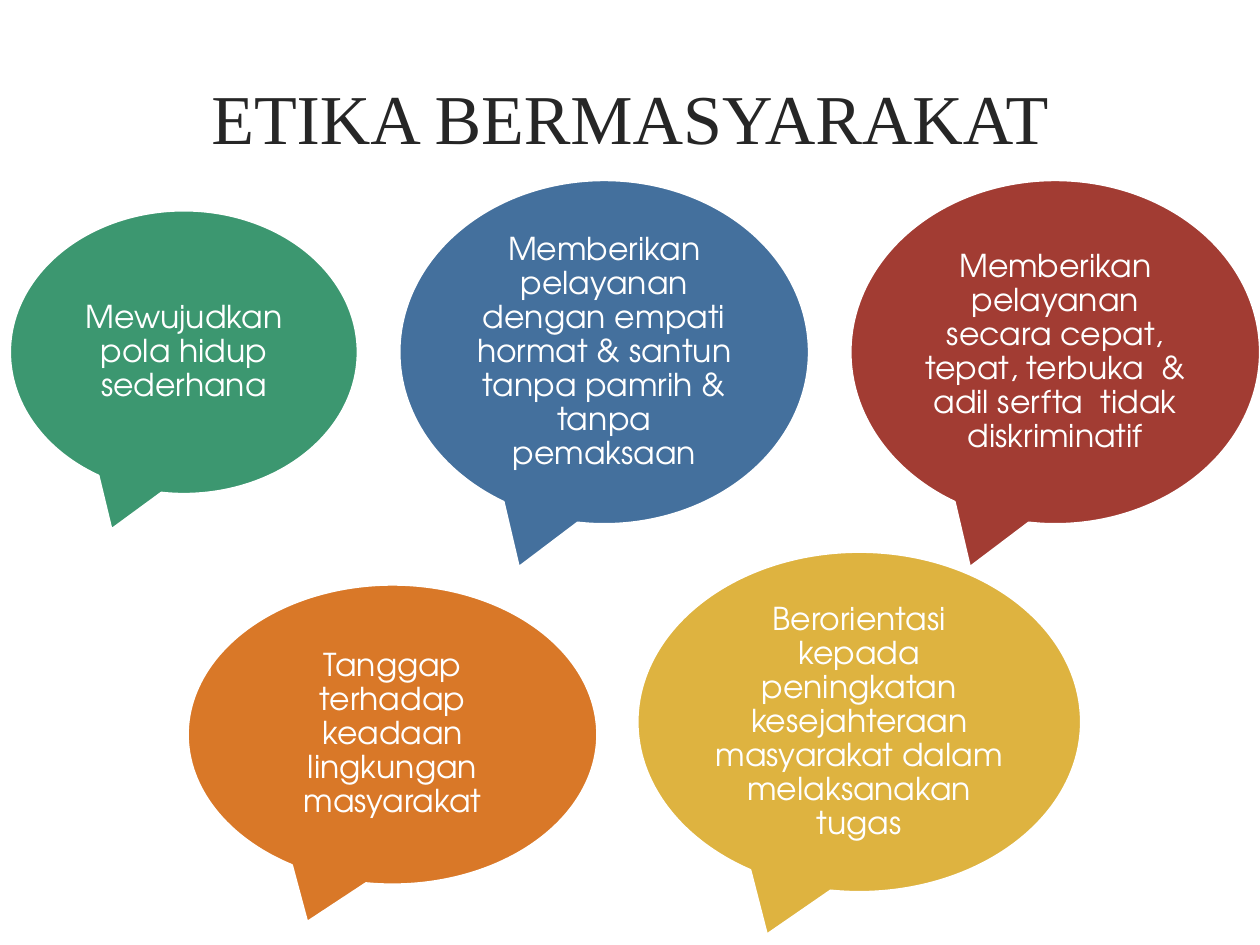
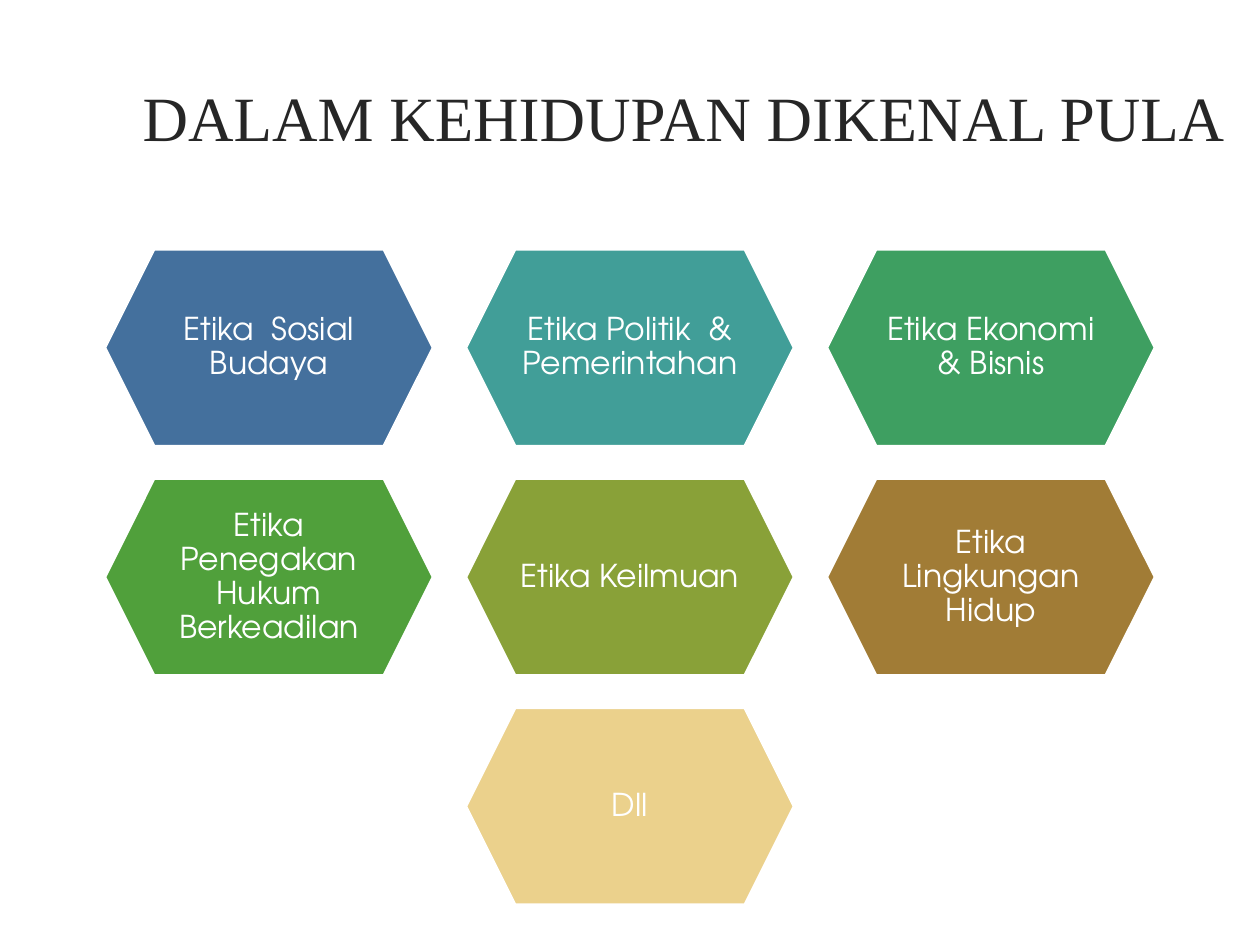
from pptx import Presentation
from pptx.dml.color import RGBColor
from pptx.enum.shapes import MSO_SHAPE as Shape
from pptx.enum.text import MSO_ANCHOR as Anchor, MSO_AUTO_SIZE as AutoSize, PP_ALIGN as Align
from pptx.util import Inches, Pt

COLORS = {
    "title": "262626", "white": "FFFFFF",
    "jade": "3C9770", "blue": "44709D", "red": "A23C33", "orange": "D97828", "yellow": "DEB340",
    "teal": "419E98", "green": "3E9F61", "leaf": "50A03B", "olive": "89A138",
    "brown": "A17C36", "sand": "EBD18C",
}
TITLE_FONT = "Times New Roman"
BODY_FONT = "TeX Gyre Adventor"


def write_text(frame, text, font=BODY_FONT, size=18, color="white", align=Align.CENTER,
               inset=None, line_spacing=None):
    frame.word_wrap = True
    frame.auto_size = AutoSize.NONE
    frame.vertical_anchor = Anchor.MIDDLE
    if inset is not None:
        frame.margin_left = frame.margin_right = Inches(inset)
        frame.margin_top = frame.margin_bottom = Inches(inset)
    frame.text = text
    paragraph = frame.paragraphs[0]
    paragraph.alignment = align
    if line_spacing:
        paragraph.line_spacing = line_spacing
    paragraph.font.name = font
    paragraph.font.size = Pt(size)
    paragraph.font.color.rgb = RGBColor.from_string(COLORS[color])


def add_label(slide, kind, box, color, text):
    shape = slide.shapes.add_shape(kind, *[Inches(length) for length in box])
    shape.shadow.inherit = False
    shape.fill.solid()
    shape.fill.fore_color.rgb = RGBColor.from_string(COLORS[color])
    shape.line.color.rgb = RGBColor.from_string(COLORS["white"])
    shape.line.width = Pt(1.25)
    write_text(shape.text_frame, text, inset=0.07, line_spacing=0.9)
    return shape


presentation = Presentation()
presentation.slide_width = Inches(10)
presentation.slide_height = Inches(7.5)

# Both slides with their titles
titles = [
    ("ETIKA BERMASYARAKAT", (1.28, 0.21, 7.44, 1.43), 40, Align.CENTER),
    ("DALAM KEHIDUPAN DIKENAL PULA", (0.5, 0.3, 9.32, 1.25), 36, Align.RIGHT),
]
slides = []
for text, box, size, align in titles:
    slide = presentation.slides.add_slide(presentation.slide_layouts[5])
    title = slide.shapes.title
    title.left, title.top, title.width, title.height = [Inches(length) for length in box]
    write_text(title.text_frame, text, font=TITLE_FONT, size=size, color="title", align=align)
    slides.append(slide)
society_slide, fields_slide = slides

# Speech bubbles: ethics in society
bubbles = [
    ((0.08, 1.67, 2.76, 2.25), "jade", "Mewujudkan pola hidup sederhana"),
    ((3.17, 1.43, 3.25, 2.73), "blue",
     "Memberikan pelayanan dengan empati hormat & santun tanpa pamrih & tanpa pemaksaan"),
    ((6.75, 1.43, 3.25, 2.73), "red",
     "Memberikan pelayanan secara cepat, tepat, terbuka  & adil serfta  tidak diskriminatif"),
    ((1.49, 4.64, 3.25, 2.38), "orange", "Tanggap terhadap keadaan lingkungan masyarakat"),
    ((5.06, 4.38, 3.52, 2.7), "yellow",
     "Berorientasi kepada peningkatan kesejahteraan masyarakat dalam melaksanakan tugas"),
]
for box, color, text in bubbles:
    add_label(society_slide, Shape.OVAL_CALLOUT, box, color, text)

# Hexagon grid: fields of ethics, three to a row, the last one centred
fields = [
    ("blue", "Etika  Sosial Budaya"),
    ("teal", "Etika Politik  & Pemerintahan"),
    ("green", "Etika Ekonomi & Bisnis"),
    ("leaf", "Etika Penegakan Hukum Berkeadilan"),
    ("olive", "Etika Keilmuan"),
    ("brown", "Etika Lingkungan Hidup"),
    ("sand", "Dll"),
]
COLUMNS = 3
HEX_WIDTH, HEX_HEIGHT = 2.6, 1.56
GRID_TOP, COLUMN_STEP, ROW_STEP = 1.98, 2.865, 1.82
for index, (color, text) in enumerate(fields):
    row, column = divmod(index, COLUMNS)
    row_count = min(COLUMNS, len(fields) - row * COLUMNS)
    center = 5 + (column - (row_count - 1) / 2) * COLUMN_STEP
    box = (center - HEX_WIDTH / 2, GRID_TOP + row * ROW_STEP, HEX_WIDTH, HEX_HEIGHT)
    hexagon = add_label(fields_slide, Shape.HEXAGON, box, color, text)
    hexagon.adjustments[0] = 0.25

presentation.save("out.pptx")
